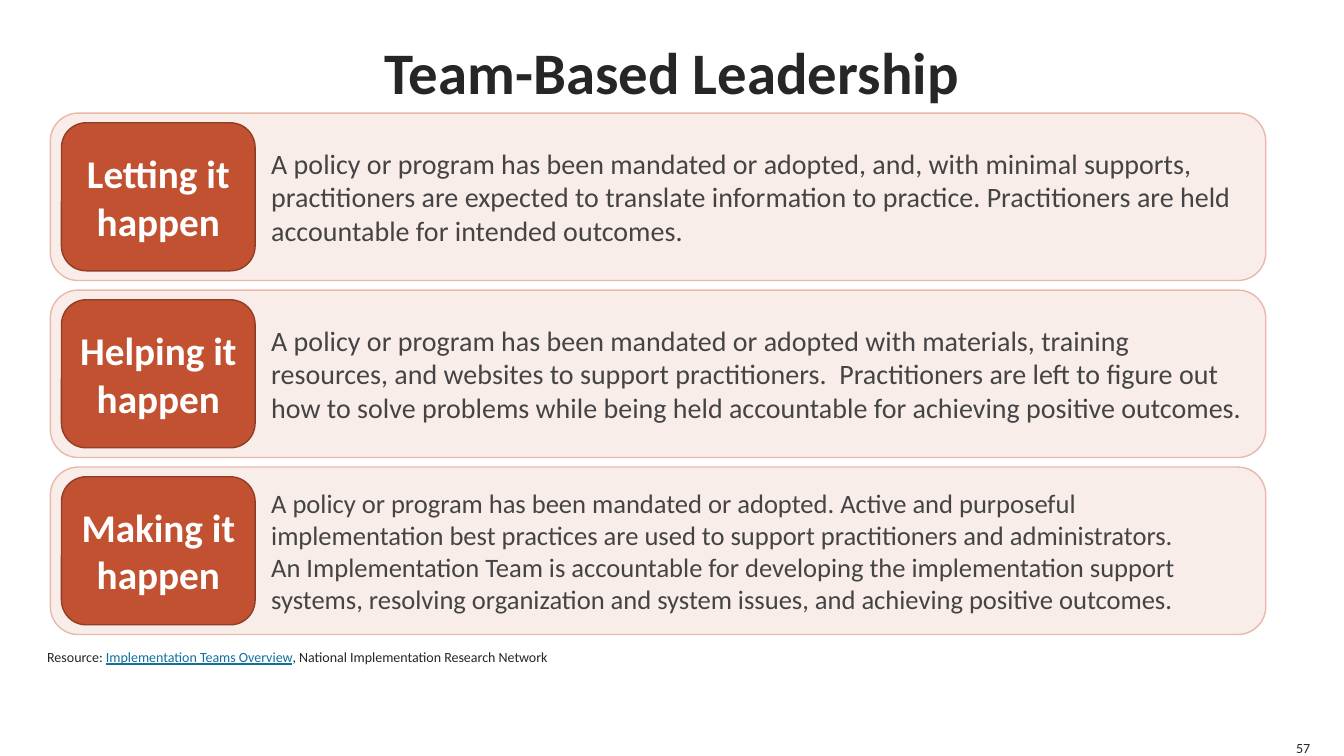
from pptx import Presentation
from pptx.dml.color import RGBColor
from pptx.enum.shapes import MSO_SHAPE as Shape
from pptx.enum.text import MSO_ANCHOR as Anchor, PP_ALIGN as Align
from pptx.util import Cm, Pt

FONT = "Calibri"
INK, BODY, WHITE, LINK = "262626", "444444", "FFFFFF", "10719C"
BAND_FILL, BAND_LINE = "F9EDEA", "E9B8AA"
TAG_FILL, TAG_LINE = "C25131", "923D25"

HEADING = "Team-Based Leadership"
STAGES = [
    ("Letting it happen", 20, [
        "A policy or program has been mandated or adopted, and, with minimal supports, "
        "practitioners are expected to translate information to practice. "
        "Practitioners are held accountable for intended outcomes."]),
    ("Helping it happen", 20, [
        "A policy or program has been mandated or adopted with materials, training "
        "resources, and websites to support practitioners.  Practitioners are left to "
        "figure out how to solve problems while being held accountable for achieving "
        "positive outcomes."]),
    ("Making it happen", 19, [
        "A policy or program has been mandated or adopted. Active and purposeful "
        "implementation best practices are used to support practitioners and administrators.",
        "An Implementation Team is accountable for developing the implementation support "
        "systems, resolving organization and system issues, and achieving positive outcomes."]),
]
RESOURCE = [
    ("Resource: ", INK, False),
    ("Implementation Teams Overview", LINK, True),
    (", National Implementation Research Network", INK, False),
]
PAGE = "57"

BAND_LEFT, BAND_TOP, BAND_WIDTH, BAND_HEIGHT = 1.27, 2.85, 30.63, 4.22
BAND_STEP = 4.46
TAG_WIDTH, TAG_HEIGHT, TAG_INDENT = 4.88, 3.73, 0.28
DESCRIPTION_INDENT = 5.36


def color(hex_text):
    return RGBColor.from_string(hex_text)


def write(frame, paragraphs, size, align=Align.LEFT, anchor=Anchor.MIDDLE, bold=False):
    frame.vertical_anchor = anchor
    for index, runs in enumerate(paragraphs):
        paragraph = frame.add_paragraph() if index else frame.paragraphs[0]
        paragraph.alignment = align
        for words, ink, underline in runs:
            run = paragraph.add_run()
            run.text = words
            font = run.font
            font.name, font.size, font.bold = FONT, Pt(size), bold
            font.underline = underline
            font.color.rgb = color(ink)


def add_text(slide, left, top, width, height, wrap=True):
    frame = slide.shapes.add_textbox(Cm(left), Cm(top), Cm(width), Cm(height)).text_frame
    frame.margin_left = frame.margin_right = frame.margin_top = frame.margin_bottom = 0
    frame.word_wrap = wrap
    return frame


def add_panel(slide, left, top, width, height, fill, line):
    panel = slide.shapes.add_shape(
        Shape.ROUNDED_RECTANGLE, Cm(left), Cm(top), Cm(width), Cm(height))
    panel.shadow.inherit = False
    panel.fill.solid()
    panel.fill.fore_color.rgb = color(fill)
    panel.line.color.rgb = color(line)
    panel.line.width = Pt(1)
    panel.text_frame.word_wrap = True
    return panel.text_frame


def main():
    deck = Presentation()
    deck.slide_width, deck.slide_height = Cm(33.87), Cm(19.05)
    slide = deck.slides.add_slide(deck.slide_layouts[6])

    heading = add_text(slide, 1.27, 0, 31.33, 3.56)
    write(heading, [[(HEADING, INK, False)]], 42, Align.CENTER, bold=True)

    for row, (label, size, description) in enumerate(STAGES):
        top = BAND_TOP + row * BAND_STEP
        band = add_panel(slide, BAND_LEFT, top, BAND_WIDTH, BAND_HEIGHT, BAND_FILL, BAND_LINE)
        band.margin_left = Cm(DESCRIPTION_INDENT)
        write(band, [[(words, BODY, False)] for words in description], size)

        tag_top = top + (BAND_HEIGHT - TAG_HEIGHT) / 2
        tag = add_panel(slide, BAND_LEFT + TAG_INDENT, tag_top, TAG_WIDTH, TAG_HEIGHT,
                        TAG_FILL, TAG_LINE)
        write(tag, [[(label, WHITE, False)]], 28, Align.CENTER, bold=True)

    resource = add_text(slide, 1.19, 16.23, 31.5, 0.53)
    write(resource, [RESOURCE], 10, anchor=Anchor.BOTTOM)

    page = add_text(slide, 32.59, 18.62, 0.43, 0.43, wrap=False)
    write(page, [[(PAGE, INK, False)]], 10, Align.RIGHT, Anchor.BOTTOM)

    deck.save("out.pptx")


if __name__ == "__main__":
    main()
